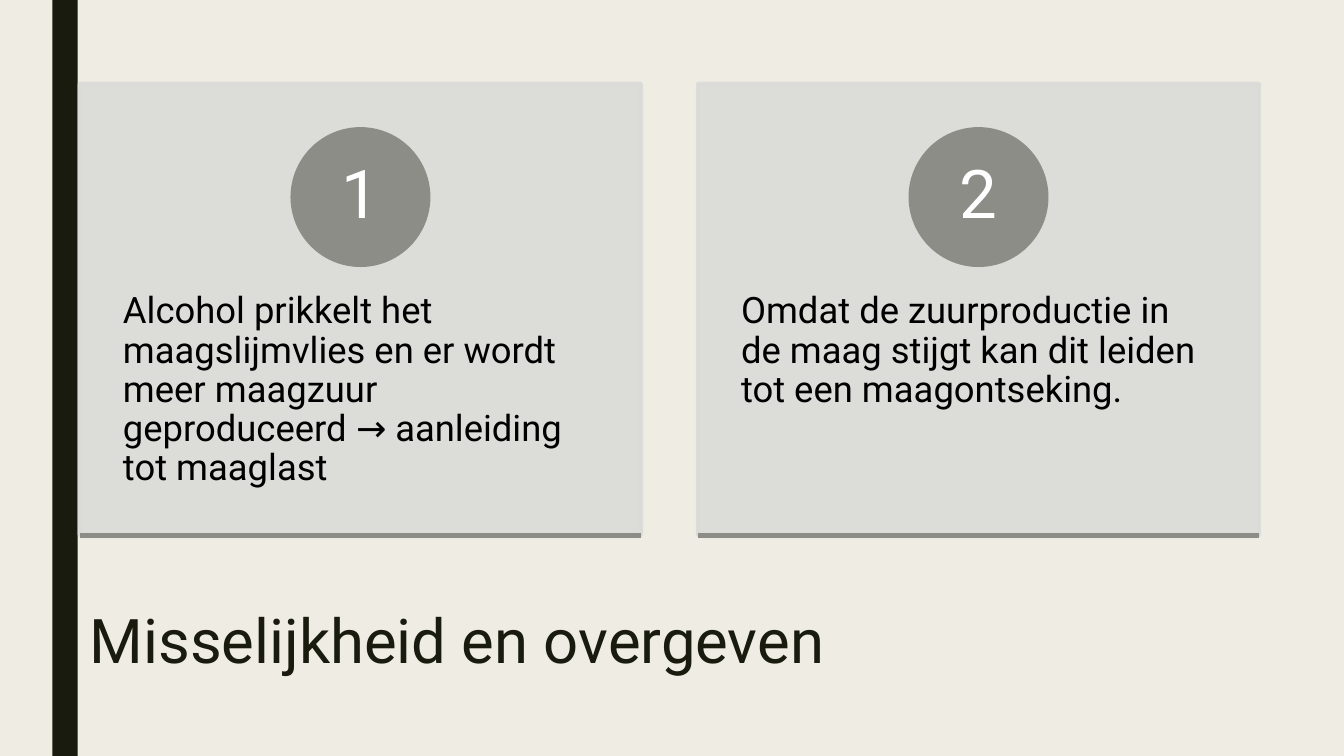
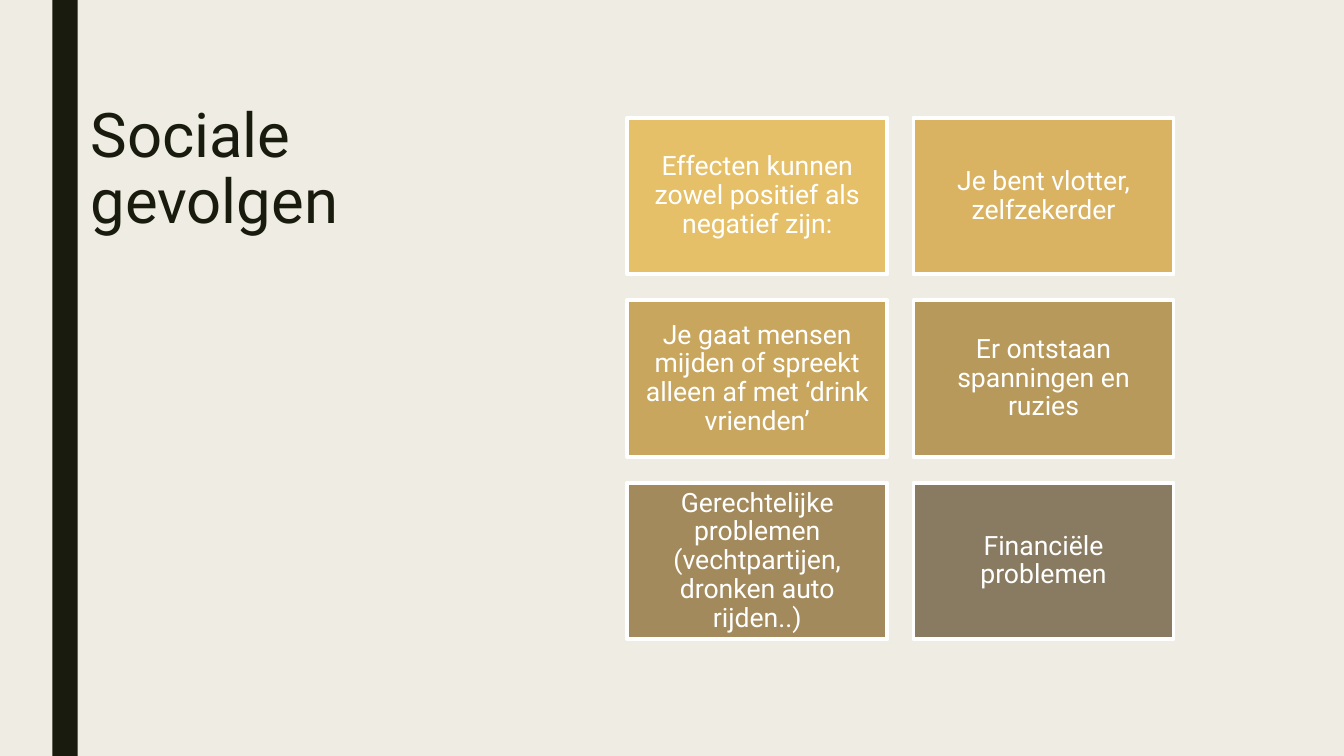
from dataclasses import dataclass
from typing import NamedTuple

from lxml.etree import SubElement
from pptx import Presentation
from pptx.dml.color import RGBColor
from pptx.enum.shapes import MSO_CONNECTOR, MSO_SHAPE
from pptx.enum.text import MSO_ANCHOR, PP_ALIGN
from pptx.oxml.ns import qn
from pptx.util import Inches, Pt

SLIDE_WIDTH, SLIDE_HEIGHT = 13.33, 7.5
FONT = "Roboto"
LINE_WIDTH = 2.75

CREAM = RGBColor(0xEF, 0xED, 0xE3)
INK = RGBColor(0x19, 0x1B, 0x0E)
PALE_GREY = RGBColor(0xDA, 0xDB, 0xD9)
GREY = RGBColor(0x8C, 0x8D, 0x86)
BLACK = RGBColor(0, 0, 0)
WHITE = RGBColor(0xFF, 0xFF, 0xFF)


class Area(NamedTuple):
    left: float
    top: float
    width: float
    height: float


@dataclass(frozen=True)
class Grid:
    left: float
    top: float
    cell_width: float
    cell_height: float
    gap: float
    columns: int = 2

    def cell(self, index: int) -> Area:
        row, column = divmod(index, self.columns)
        return Area(self.left + column * (self.cell_width + self.gap),
                    self.top + row * (self.cell_height + self.gap),
                    self.cell_width, self.cell_height)


@dataclass(frozen=True)
class Tile:
    text: str
    fill: RGBColor


BAND = Area(0.52, 0, 0.25, SLIDE_HEIGHT)
CARD_GRID = Grid(0.79, 0.83, 5.57, 4.48, gap=0.56)
TILE_GRID = Grid(6.22, 1.17, 2.58, 1.55, gap=0.26)
BADGE_SIZE, BADGE_DROP = 1.35, 0.45
CARD_INSETS = (0.43, 2.07, 0.43, 0.36)
BADGE_INSETS = (0.1, 0.01, 0.1, 0.01)
TILE_INSETS = (0.08,) * 4
TITLE_INSETS = (0.1, 0.05, 0.1, 0.05)

CARD_TEXTS = (
    "Alcohol prikkelt het maagslijmvlies en er wordt meer maagzuur "
    "geproduceerd → aanleiding tot maaglast",
    "Omdat de zuurproductie in de maag stijgt kan dit leiden tot een maagontseking.",
)
TILES = (
    Tile("Effecten kunnen zowel positief als negatief zijn:", RGBColor(0xE6, 0xC0, 0x69)),
    Tile("Je bent vlotter, zelfzekerder", RGBColor(0xD9, 0xB3, 0x62)),
    Tile("Je gaat mensen mijden of spreekt alleen af met ‘drink vrienden’",
         RGBColor(0xC9, 0xA6, 0x5E)),
    Tile("Er ontstaan spanningen en ruzies", RGBColor(0xB7, 0x99, 0x5B)),
    Tile("Gerechtelijke problemen (vechtpartijen, dronken auto rijden..)",
         RGBColor(0xA3, 0x8A, 0x5C)),
    Tile("Financiële problemen", RGBColor(0x89, 0x7B, 0x61)),
)


def write(shape, text: str, *, size: float, color: RGBColor, insets: tuple,
          align=PP_ALIGN.LEFT, anchor=MSO_ANCHOR.TOP, spacing: float = 0.9) -> None:
    frame = shape.text_frame
    frame.word_wrap = True
    frame.vertical_anchor = anchor
    (frame.margin_left, frame.margin_top,
     frame.margin_right, frame.margin_bottom) = map(Inches, insets)
    para = frame.paragraphs[0]
    para.alignment = align
    para.line_spacing = spacing
    span = para.add_run()
    span.text = text
    span.font.name = FONT
    span.font.size = Pt(size)
    span.font.color.rgb = color


def add_panel(page, area: Area, fill: RGBColor, line: RGBColor | None = None,
              preset=MSO_SHAPE.RECTANGLE):
    panel = page.shapes.add_shape(preset, *map(Inches, area))
    panel.shadow.inherit = False
    panel.fill.solid()
    panel.fill.fore_color.rgb = fill
    if line is None:
        panel.line.fill.background()
    else:
        panel.line.color.rgb = line
        panel.line.width = Pt(LINE_WIDTH)
    return panel


def set_opacity(shape, percent: int) -> None:
    """Make the fill and the outline of a shape partly transparent."""
    for color in shape.element.spPr.iter(qn("a:srgbClr")):
        SubElement(color, qn("a:alpha"), val=str(percent * 1000))


def add_rule(page, left: float, top: float, width: float) -> None:
    rule = page.shapes.add_connector(MSO_CONNECTOR.STRAIGHT, Inches(left), Inches(top),
                                     Inches(left + width), Inches(top))
    rule.line.color.rgb = GREY
    rule.line.width = Pt(LINE_WIDTH * 1.3)
    SubElement(rule.element.spPr, qn("a:effectLst"))


def add_page(deck, title: str, title_area: Area):
    """Add a page with the shared side band and title style."""
    page = deck.slides.add_slide(deck.slide_layouts[6])
    add_panel(page, BAND, INK)
    box = page.shapes.add_textbox(*map(Inches, title_area))
    write(box, title, size=44, color=INK, insets=TITLE_INSETS, spacing=0.89)
    return page


def add_card(page, number: int, text: str) -> None:
    area = CARD_GRID.cell(number - 1)
    card = add_panel(page, area, PALE_GREY, PALE_GREY)
    set_opacity(card, 90)
    write(card, text, size=26, color=BLACK, insets=CARD_INSETS)
    badge_area = Area(area.left + (area.width - BADGE_SIZE) / 2, area.top + BADGE_DROP,
                      BADGE_SIZE, BADGE_SIZE)
    badge = add_panel(page, badge_area, GREY, GREY, MSO_SHAPE.OVAL)
    write(badge, str(number), size=48, color=WHITE, insets=BADGE_INSETS,
          align=PP_ALIGN.CENTER, anchor=MSO_ANCHOR.MIDDLE)
    add_rule(page, area.left, area.top + area.height, area.width)


def build_nausea_page(deck) -> None:
    page = add_page(deck, "Misselijkheid en overgeven", Area(0.79, 6.01, 11.71, 0.83))
    for number, text in enumerate(CARD_TEXTS, start=1):
        add_card(page, number, text)


def build_social_page(deck) -> None:
    page = add_page(deck, "Sociale gevolgen", Area(0.8, 0.99, 4, 4.82))
    for index, tile in enumerate(TILES):
        panel = add_panel(page, TILE_GRID.cell(index), tile.fill, WHITE)
        write(panel, tile.text, size=19, color=WHITE, insets=TILE_INSETS,
              align=PP_ALIGN.CENTER, anchor=MSO_ANCHOR.MIDDLE)


def main() -> None:
    deck = Presentation()
    deck.slide_width, deck.slide_height = Inches(SLIDE_WIDTH), Inches(SLIDE_HEIGHT)
    background = deck.slide_master.background.fill
    background.solid()
    background.fore_color.rgb = CREAM
    build_nausea_page(deck)
    build_social_page(deck)
    deck.save("out.pptx")


if __name__ == "__main__":
    main()
